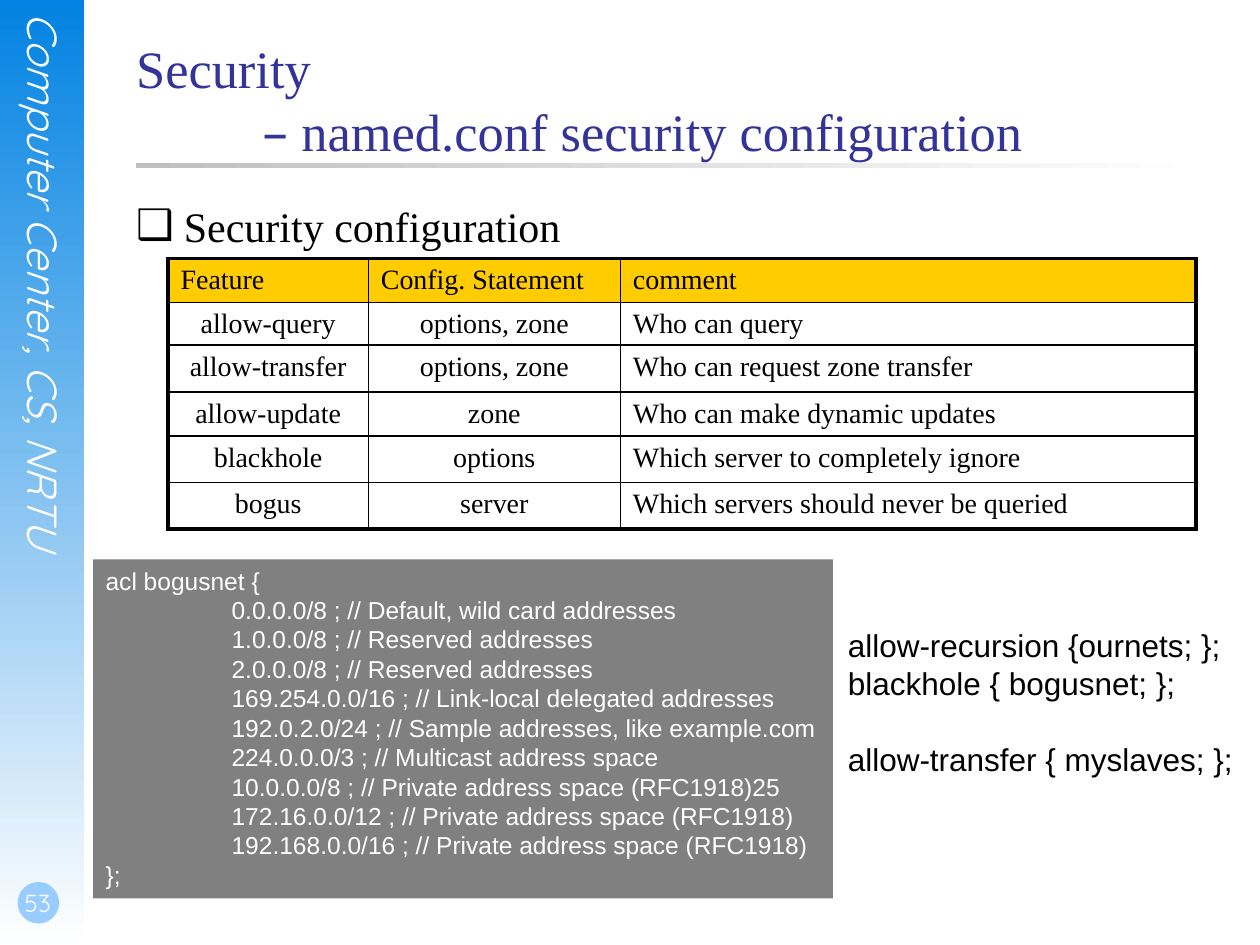
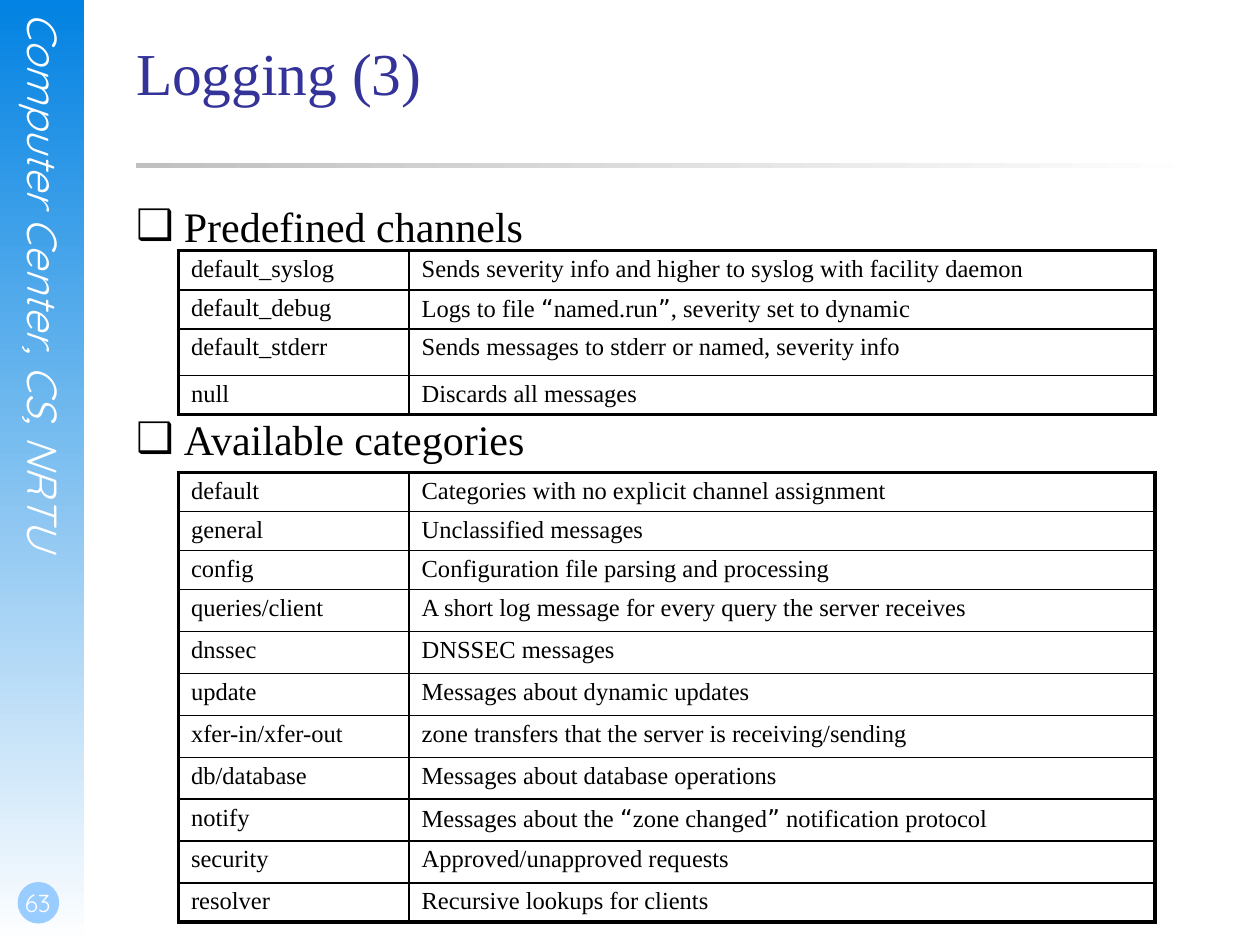
import itertools

import pptx
import pptx.dml.color
import pptx.enum.shapes
import pptx.enum.text
import pptx.oxml
import pptx.oxml.ns
import pptx.util

# Content
SIDEBAR = "Computer Center, CS, NRTU"

SECURITY_TITLE = ["Security", "\t– named.conf security configuration"]
FEATURES = [
    ("Feature", "Config. Statement", "comment"),
    ("allow-query", "options, zone", "Who can query"),
    ("allow-transfer", "options, zone", "Who can request zone transfer"),
    ("allow-update", "zone", "Who can make dynamic updates"),
    ("blackhole", "options", "Which server to completely ignore"),
    ("bogus", "server", "Which servers should never be queried"),
]
BOGUS_NETS = [
    "0.0.0.0/8 ; // Default, wild card addresses",
    "1.0.0.0/8 ; // Reserved addresses",
    "2.0.0.0/8 ; // Reserved addresses",
    "169.254.0.0/16 ; // Link-local delegated addresses",
    "192.0.2.0/24 ; // Sample addresses, like example.com",
    "224.0.0.0/3 ; // Multicast address space",
    "10.0.0.0/8 ; // Private address space (RFC1918)25",
    "172.16.0.0/12 ; // Private address space (RFC1918)",
    "192.168.0.0/16 ; // Private address space (RFC1918)",
]
ACL = ["acl bogusnet {", *["\t" + net for net in BOGUS_NETS], "};"]
ACCESS_RULES = ["allow-recursion {ournets; };", "blackhole { bogusnet; };",
                "allow-transfer { myslaves; };"]

LOGGING_TITLE = ["Logging (3)"]
CHANNELS = [
    ("default_syslog", "Sends severity info and higher to syslog with facility daemon"),
    ("default_debug", "Logs to file “named.run”, severity set to dynamic"),
    ("default_stderr", "Sends messages to stderr or named, severity info"),
    ("null", "Discards all messages"),
]
CATEGORIES = [
    ("default", "Categories with no explicit channel assignment"),
    ("general", "Unclassified messages"),
    ("config", "Configuration file parsing and processing"),
    ("queries/client", "A short log message for every query the server receives"),
    ("dnssec", "DNSSEC messages"),
    ("update", "Messages about dynamic updates"),
    ("xfer-in/xfer-out", "zone transfers that the server is receiving/sending"),
    ("db/database", "Messages about database operations"),
    ("notify", "Messages about the “zone changed” notification protocol"),
    ("security", "Approved/unapproved requests"),
    ("resolver", "Recursive lookups for clients"),
]

# Theme
THEME = {
    "serif": "Times New Roman", "sans": "Arial", "side": "Quicksand", "symbol": "DejaVu Sans",
    "title": "333399", "ink": "000000", "paper": "FFFFFF", "sidebar": "0282E2",
    "badge": "99CCFF", "rule": "C0C0C0", "header": "FFCC00", "code": "808080",
    "heading_pt": 24, "side_pt": 24, "number_pt": 14, "code_pt": 14, "rules_pt": 18,
    "outer_pt": 2.25, "inner_pt": 1, "leading": 1.2,
}
WIDTH, HEIGHT = 10, 7.5
LEFT, CONTENT_WIDTH = 1.08, 8.5
FEATURES_LEFT, LOGGING_LEFT = WIDTH * 2 / 15, WIDTH * 17 / 120
SYMBOLS = "“”–"
ALIGN = pptx.enum.text.PP_ALIGN
TOP, BOTTOM = pptx.enum.text.MSO_ANCHOR.TOP, pptx.enum.text.MSO_ANCHOR.BOTTOM
SHAPE = pptx.enum.shapes.MSO_SHAPE


def inches(*lengths):
    return [pptx.util.Inches(length) for length in lengths]


def rgb(name):
    return pptx.dml.color.RGBColor.from_string(THEME[name])


def write(paragraph, text, face, size, color, align=ALIGN.LEFT, italic=False):
    """Fill a paragraph, giving typographic symbols their own face."""
    for is_symbol, letters in itertools.groupby(text, lambda letter: letter in SYMBOLS):
        run = paragraph.add_run()
        run.text = "".join(letters)
        style(run.font, "symbol" if is_symbol else face, size, color, italic)
    style(paragraph.font, face, size, color, italic)
    paragraph.alignment = align
    if text.startswith("\t"):
        add_properties(paragraph, f'<a:tabLst {{}}><a:tab pos="{pptx.util.Inches(1)}" '
                                  'algn="l"/></a:tabLst>')


def style(font, face, size, color, italic):
    font.name, font.size = THEME[face], pptx.util.Pt(size)
    font.color.rgb, font.italic = rgb(color), italic


def add_properties(paragraph, *elements):
    """Add bullet or tab elements, in order, ahead of the default font."""
    properties = paragraph._p.get_or_add_pPr()
    for element in elements:
        node = pptx.oxml.parse_xml(element.format(pptx.oxml.ns.nsdecls("a")))
        properties.insert_element_before(node, "a:defRPr", "a:extLst")
    return properties


def set_frame(frame, margins=(0, 0, 0, 0), anchor=TOP, wrap=True):
    (frame.margin_left, frame.margin_top,
     frame.margin_right, frame.margin_bottom) = inches(*margins)
    frame.vertical_anchor, frame.word_wrap = anchor, wrap
    frame.auto_size = pptx.enum.text.MSO_AUTO_SIZE.NONE


def add_block(slide, preset, box, fill, fade_angle=None):
    block = slide.shapes.add_shape(preset, *inches(*box))
    block.shadow.inherit = False
    block.line.fill.background()
    if fade_angle is None:
        block.fill.solid()
        block.fill.fore_color.rgb = rgb(fill)
    else:
        block.fill.gradient()
        block.fill.gradient_angle = fade_angle
        for stop, color in zip(block.fill.gradient_stops, (fill, "paper")):
            stop.color.rgb = rgb(color)
    return block


def add_text(slide, box, text, *look, **frame_options):
    frame = slide.shapes.add_textbox(*inches(*box)).text_frame
    set_frame(frame, **frame_options)
    write(frame.paragraphs[0], text, *look)
    return frame


def add_slide(deck, title_lines, title_pt, number):
    """Start a slide with the shared sidebar, page badge, title and rule."""
    slide = deck.slides.add_slide(deck.slide_layouts[5])
    add_block(slide, SHAPE.RECTANGLE, (0, 0, WIDTH / 15, HEIGHT), "sidebar", 270)
    side = add_text(slide, (0.15, 0.1, 0.4, 5.11), SIDEBAR,
                    "side", THEME["side_pt"], "paper", ALIGN.LEFT, True)
    side._txBody.bodyPr.set("vert", "eaVert")
    add_block(slide, SHAPE.OVAL, (0.14, 7, 0.33, 0.33), "badge")
    add_text(slide, (0, 6.83, 0.58, 0.5), str(number), "side", THEME["number_pt"], "paper",
             ALIGN.CENTER, margins=(0.02, 0, 0, 0.05), anchor=BOTTOM)
    add_block(slide, SHAPE.RECTANGLE, (LEFT, 1.29, CONTENT_WIDTH, 0.04), "rule", 0)

    title = slide.shapes.title
    title.left, title.top, title.width, title.height = inches(LEFT, 0.28, CONTENT_WIDTH, 1.25)
    set_frame(title.text_frame, margins=(0, 0.01, 0, 0))
    paragraph = title.text_frame.paragraphs[0]
    paragraph.line_spacing = pptx.util.Pt(title_pt * THEME["leading"])
    for index, line in enumerate(title_lines):
        if index:
            paragraph.add_line_break()
        write(paragraph, line, "serif", title_pt, "title")
    return slide


def add_heading(slide, top, text):
    frame = add_text(slide, (LEFT, top, CONTENT_WIDTH, 0.4), text,
                     "serif", THEME["heading_pt"], "ink")
    properties = add_properties(frame.paragraphs[0],
                                f'<a:buFont {{}} typeface="{THEME["symbol"]}"/>',
                                '<a:buChar {} char="❑"/>')
    indent = pptx.util.Inches(0.38)
    properties.set("marL", str(indent))
    properties.set("indent", str(-indent))


def add_borders(cell, outer_sides):
    properties = cell._tc.get_or_add_tcPr()
    for side in "LRTB":
        width = pptx.util.Pt(THEME["outer_pt" if side in outer_sides else "inner_pt"])
        properties.append(pptx.oxml.parse_xml(
            f'<a:ln{side} {pptx.oxml.ns.nsdecls("a")} w="{width}"><a:solidFill>'
            f'<a:srgbClr val="{THEME["ink"]}"/></a:solidFill></a:ln{side}>'))


def add_grid(slide, left, top, records, widths, heights, size, top_inset,
             header=False, centered=()):
    box = inches(left, top, sum(widths), sum(heights))
    table = slide.shapes.add_table(len(records), len(widths), *box).table
    table.first_row, table.horz_banding = header, False
    for column, width in zip(table.columns, widths):
        column.width = pptx.util.Inches(width)
    last_row, last_column = len(records) - 1, len(widths) - 1
    for r, record in enumerate(records):
        table.rows[r].height = pptx.util.Inches(heights[r])
        for c, text in enumerate(record):
            cell = table.cell(r, c)
            cell.margin_left, cell.margin_right = inches(0.1, 0.1)
            cell.margin_top, cell.margin_bottom = inches(top_inset, 0.08 - top_inset)
            is_header = header and r == 0
            align = ALIGN.CENTER if c in centered and not is_header else ALIGN.LEFT
            write(cell.text_frame.paragraphs[0], text, "serif", size, "ink", align)
            edges = {"L": c == 0, "R": c == last_column, "T": r == 0, "B": r == last_row}
            add_borders(cell, [side for side, outer in edges.items() if outer])
            if is_header:
                cell.fill.solid()
                cell.fill.fore_color.rgb = rgb("header")
            else:
                cell.fill.background()


def write_lines(frame, lines, size, color):
    set_frame(frame, margins=(0.1, 0.05, 0.1, 0.05), wrap=False)
    for index, line in enumerate(lines):
        paragraph = frame.paragraphs[0] if index == 0 else frame.add_paragraph()
        paragraph.line_spacing = pptx.util.Pt(size * THEME["leading"])
        write(paragraph, line, "sans", size, color)


def build_security(deck):
    slide = add_slide(deck, SECURITY_TITLE, 30, 53)
    add_heading(slide, 1.59, "Security configuration")
    add_grid(slide, FEATURES_LEFT, 2.05, FEATURES, (1.59, 2, 4.57),
             (0.35, 0.34, 0.37, 0.35, 0.37, 0.37), 16, 0.05, header=True, centered=(0, 1))
    # Address list and the rules that use it
    acl = add_block(slide, SHAPE.RECTANGLE, (0.74, 4.44, 5.87, 2.69), "code")
    write_lines(acl.text_frame, ACL, THEME["code_pt"], "paper")
    rules = slide.shapes.add_textbox(*inches(6.63, 4.92, 3.29, 1.31)).text_frame
    write_lines(rules, ACCESS_RULES, THEME["rules_pt"], "ink")
    rules.paragraphs[-1].space_before = pptx.util.Pt(THEME["rules_pt"] * THEME["leading"])


def build_logging(deck):
    slide = add_slide(deck, LOGGING_TITLE, 34, 63)
    short = 0.31
    tall = (3.57 - 4 * short) / 7
    sections = [
        ("Predefined channels", 1.59, 1.99, CHANNELS, (short, short, 0.37, short)),
        ("Available categories", 3.28, 3.75, CATEGORIES, (*[short] * 3, *[tall] * 7, short)),
    ]
    for heading, heading_top, grid_top, records, heights in sections:
        add_heading(slide, heading_top, heading)
        add_grid(slide, LOGGING_LEFT, grid_top, records, (1.83, 5.92), heights, 14, 0.04)


def main():
    deck = pptx.Presentation()
    deck.slide_width, deck.slide_height = inches(WIDTH, HEIGHT)
    build_security(deck)
    build_logging(deck)
    deck.save("out.pptx")


if __name__ == "__main__":
    main()
